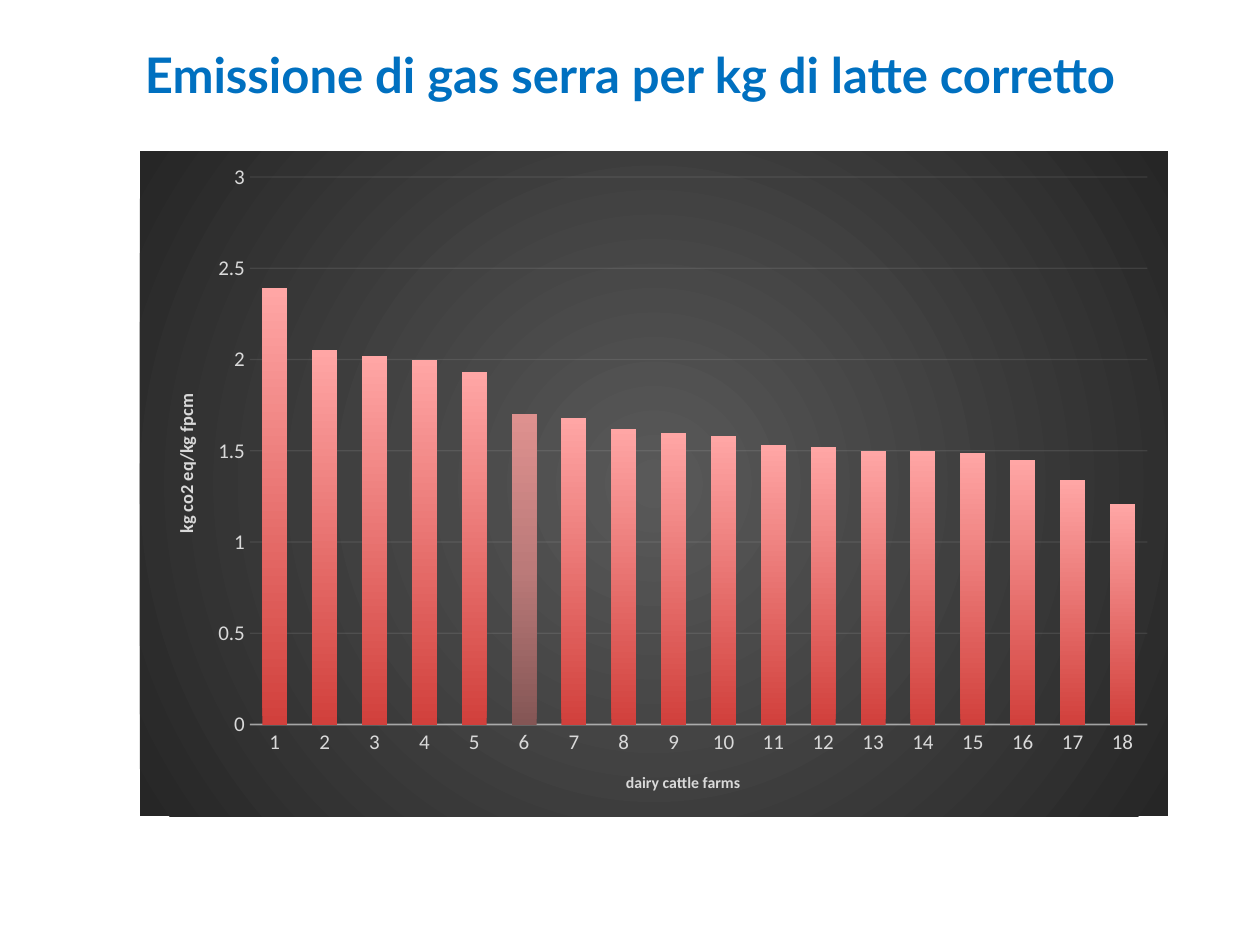
import pptx
import pptx.util
import pptx.chart.data
import pptx.dml.color
import pptx.enum.chart
import pptx.enum.text
import pptx.oxml
import pptx.oxml.ns
import pptx.oxml.xmlchemy

Inches, Pt = pptx.util.Inches, pptx.util.Pt
qn = pptx.oxml.ns.qn
W, H = Inches(10), Inches(7.5)
LIGHT, RULE = "D9D9D9", "F2F2F2"
EMISSIONS = [2.39, 2.05, 2.02, 2, 1.93, 1.7, 1.68, 1.62, 1.6,
             1.58, 1.53, 1.52, 1.5, 1.5, 1.49, 1.45, 1.34, 1.21]
HIGHLIGHT = 5  # index of the muted column


def rgb(value):
    return pptx.dml.color.RGBColor.from_string(value)


def element(tag, val=None):
    item = pptx.oxml.xmlchemy.OxmlElement(tag)
    if val is not None:
        item.set("val", str(val))
    return item


def set_font(font, name, size, color, bold=False):
    font.name, font.size, font.bold = name, Pt(size), bold
    font.color.rgb = rgb(color)


def gradient(sp_pr, colors, direction):
    """Fill with evenly spaced colours; direction is the a:lin or a:path element."""
    stops = "".join(
        f'<a:gs pos="{100000 * i // (len(colors) - 1)}"><a:srgbClr val="{c}"/></a:gs>'
        for i, c in enumerate(colors))
    sp_pr.insert(0, pptx.oxml.parse_xml(
        f'<a:gradFill {pptx.oxml.ns.nsdecls("a")} rotWithShape="1">'
        f'<a:gsLst>{stops}</a:gsLst>{direction}</a:gradFill>'))


def upward(fmt, *colors):
    fmt.fill.background()
    sp_pr = fmt.fill._xPr
    sp_pr.remove(sp_pr.find(qn("a:noFill")))
    gradient(sp_pr, colors, '<a:lin ang="16200000" scaled="0"/>')


def set_line(line, color, width, opacity):
    line.width = Pt(width)
    line.color.rgb = rgb(color)
    clr = next(line._get_or_add_ln().iter(qn("a:srgbClr")))
    clr.append(element("a:alpha", opacity * 1000))


def place(parent, index, **shares):
    """Fix a chart part at shares of the chart's size."""
    layout = parent.find(qn("c:layout"))
    if layout is None:
        layout = element("c:layout")
        parent.insert(index, layout)
    manual = element("c:manualLayout")
    layout.append(manual)
    settings = {"xMode": "edge", "yMode": "edge", **shares}
    if "w" in shares:
        settings = {"layoutTarget": "inner", **settings}
    for tag, value in settings.items():
        manual.append(element(f"c:{tag}", value))


def style_axis(axis, title, size, x, y):
    axis.major_tick_mark = pptx.enum.chart.XL_TICK_MARK.NONE
    set_font(axis.tick_labels.font, "Calibri", 12, LIGHT)
    tf = axis.axis_title.text_frame
    tf.text = title
    set_font(tf.paragraphs[0].font, "Calibri", size, LIGHT, True)
    place(axis.axis_title._element, 1, x=x, y=y)


def add_title(s, text):
    tf = s.shapes.add_textbox(W * 0.05, H * 0.04, W * 0.9, Inches(1.25)).text_frame
    tf.word_wrap = True
    p = tf.paragraphs[0]
    p.text = text
    p.alignment = pptx.enum.text.PP_ALIGN.CENTER
    set_font(p.font, "Lato", 28, "0070C0", True)


def add_emissions_chart(s):
    data = pptx.chart.data.CategoryChartData()
    data.categories = [str(n + 1) for n in range(len(EMISSIONS))]
    data.add_series("Series 1", EMISSIONS)
    chart = s.shapes.add_chart(
        pptx.enum.chart.XL_CHART_TYPE.COLUMN_CLUSTERED,
        Inches(1.11), H * 0.16, Inches(8.16), Inches(5.28), data).chart
    chart.has_legend = chart.has_title = False
    set_font(chart.font, "Calibri", 10, "000000")

    # Dark radial background
    sp_pr = element("c:spPr")
    chart._chartSpace.find(qn("c:chart")).addnext(sp_pr)
    gradient(sp_pr, ["595959", "262626"],
             '<a:path path="circle"><a:fillToRect l="50000" t="50000" '
             'r="50000" b="50000"/></a:path>')
    line = element("a:ln")
    line.append(element("a:noFill"))
    sp_pr.append(line)

    # Columns
    plot = chart.plots[0]
    plot.gap_width, plot.overlap, plot.vary_by_categories = 100, -24, False
    series = plot.series[0]
    upward(series.format, "D1403C", "FFA6A5")
    upward(series.points[HIGHLIGHT].format, "845655", "BB7A79", "DE918F")
    place(next(chart._chartSpace.iter(qn("c:plotArea"))), 0,
          x=0.107, y=0.039, w=0.873, h=0.823)

    # Axes
    cat, val = chart.category_axis, chart.value_axis
    style_axis(cat, "dairy cattle farms", 9, 0.47, 0.93)
    style_axis(val, "kg co2 eq/kg fpcm", 10.5, 0.03, 0.36)
    set_line(cat.format.line, RULE, 1, 54)
    val.minimum_scale, val.maximum_scale, val.major_unit = 0, 3, 0.5
    val.format.line.fill.background()
    set_line(val.major_gridlines.format.line, RULE, 0.75, 10)


def main():
    prs = pptx.Presentation()
    prs.slide_width, prs.slide_height = W, H
    s = prs.slides.add_slide(prs.slide_layouts[6])
    add_emissions_chart(s)
    add_title(s, "Emissione di gas serra per kg di latte corretto")
    prs.save("out.pptx")


if __name__ == "__main__":
    main()
